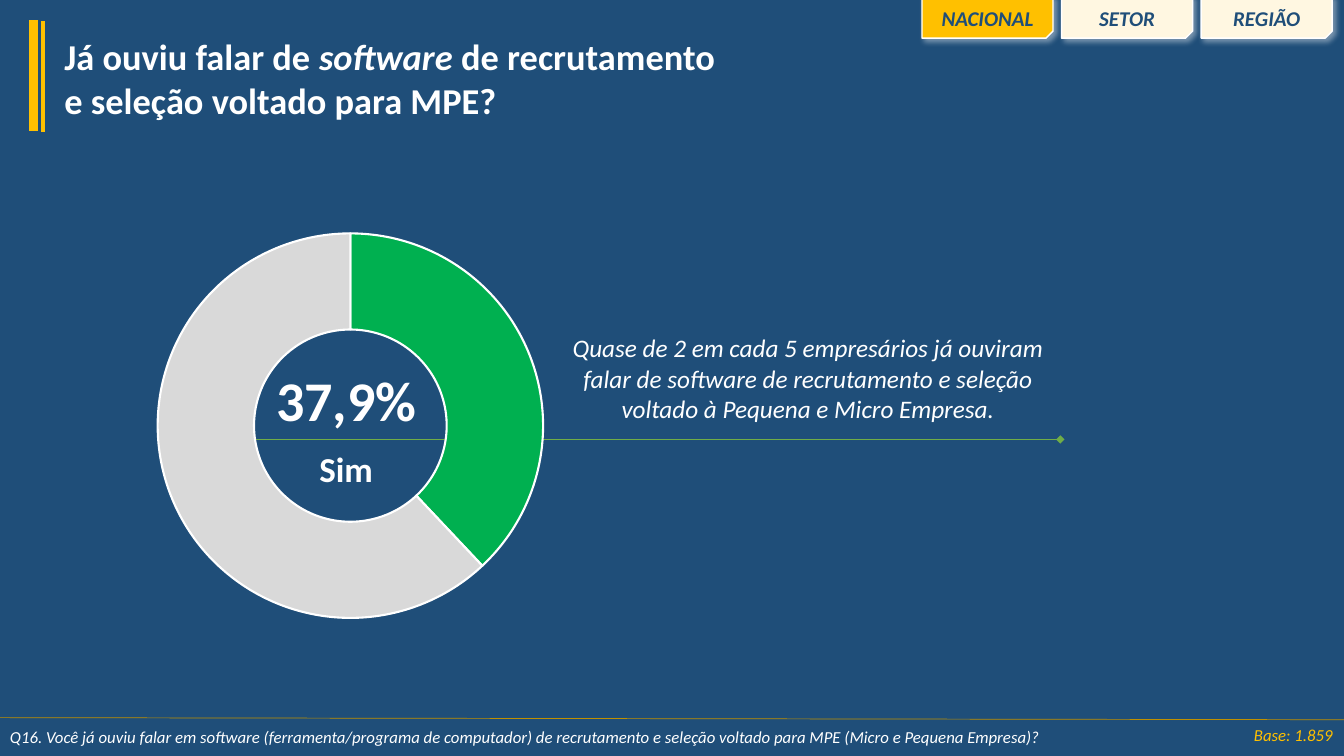
from lxml import etree
from pptx import Presentation
from pptx import util as u
from pptx.chart import data
from pptx.dml import color
from pptx.enum import chart as charts, shapes, text
from pptx.oxml import ns, parse_xml

COLORS = {"navy": "1F4E79", "gold": "FFC000", "dark_gold": "BF9000", "cream": "FFF7E1",
          "white": "FFFFFF", "green": "00B050", "gray": "D9D9D9", "leaf": "70AD47"}
TITLE = [("Já ouviu falar de ", False), ("software", True),
         (" de recrutamento e seleção voltado para MPE?", False)]
TABS = [("NACIONAL", "gold"), ("SETOR", "cream"), ("REGIÃO", "cream")]
TAB_LEFT, TAB_STEP, TAB_WIDTH = 658.6, 99.7, 93.6
ANSWERS = [("1", 38, "green"), ("2", 62, "gray")]
RING_LAYOUT = {"x": 0.198, "y": 0.027, "w": 0.617, "h": 0.973}
QUESTION = ("Q16.\u00a0Você já ouviu falar em software (ferramenta/programa de computador) de "
            "recrutamento e seleção voltado para MPE (Micro e Pequena Empresa)?")
FINDING = ("Quase de 2 em cada 5 empresários já ouviram falar de software de recrutamento "
           "e seleção voltado à Pequena e Micro Empresa.")
BASE = "Base: 1.859"
LINES = [((178.6, 313.9), (757.4, 313.9), "leaf", 0.5, True),
         ((23.8, 14.4), (23.8, 93.6), "gold", 6, False),
         ((31, 15.1), (31, 94.3), "gold", 3, False),
         ((-1.4, 512.6), (960, 514.1), "dark_gold", 0.5, False)]
TEXTS = [(QUESTION, (0, 515.5, 960, 21.6), dict(size=12, italic=True)),
         (TITLE, (38.9, 20.9, 490.3, 70.6), dict(size=26, bold=True)),
         ("37,9%", (190.1, 257.8, 115.9, 55.4), dict(size=40, bold=True, wrap=False)),
         ("Sim", (221, 316.1, 53.3, 37.4), dict(size=25, bold=True, wrap=False)),
         (FINDING, (401.8, 234, 350.6, 72.7), dict(size=18, italic=True, align="CENTER"))]


def rgb(name):
    return color.RGBColor.from_string(COLORS[name])


def points(values):
    return [u.Pt(value) for value in values]


def write(shape, content, size, fill="white", bold=False, italic=False,
          align="LEFT", anchor="TOP", wrap=True):
    frame = shape.text_frame
    frame.word_wrap = wrap
    frame.vertical_anchor = getattr(text.MSO_ANCHOR, anchor)
    paragraph = frame.paragraphs[0]
    paragraph.alignment = getattr(text.PP_ALIGN, align)
    pieces = [(content, italic)] if isinstance(content, str) else content
    for words, slanted in pieces:
        run = paragraph.add_run()
        run.text = words
        run.font.name, run.font.size = "Calibri", u.Pt(size)
        run.font.bold, run.font.italic = bold, slanted
        run.font.color.rgb = rgb(fill)


def add_line(slide, start, end, stroke, width, diamonds):
    line = slide.shapes.add_connector(shapes.MSO_CONNECTOR.STRAIGHT, *points(start + end))
    line.line.color.rgb, line.line.width = rgb(stroke), u.Pt(width)
    if diamonds:
        for tag in ("a:headEnd", "a:tailEnd"):
            etree.SubElement(line.line._get_or_add_ln(), ns.qn(tag), type="diamond")
    etree.SubElement(line._element.spPr, ns.qn("a:effectLst"))


def add_tab(slide, left, label, fill):
    tab = slide.shapes.add_shape(shapes.MSO_SHAPE.SNIP_1_RECTANGLE,
                                 *points((left, -2.9, TAB_WIDTH, 30.2)))
    tab.fill.solid()
    tab.fill.fore_color.rgb = rgb(fill)
    tab.line.color.rgb, tab.line.width = rgb("white"), u.Pt(1)
    properties = tab._element.spPr
    properties.find(ns.qn("a:xfrm")).set("flipV", "1")
    properties.append(parse_xml(
        f'<a:effectLst {ns.nsdecls("a")}><a:outerShdw blurRad="{u.Pt(4)}" dist="{u.Pt(3)}" '
        f'dir="2700000" algn="tl" rotWithShape="0"><a:srgbClr val="{COLORS["white"]}">'
        '<a:alpha val="40000"/></a:srgbClr></a:outerShdw></a:effectLst>'))
    box = slide.shapes.add_textbox(*points((left, 0.7, TAB_WIDTH, 25.2)))
    write(box, label, size=15, fill="navy", bold=True, italic=True, align="CENTER")


def add_ring(slide):
    answers = data.CategoryChartData()
    answers.categories = [name for name, _, _ in ANSWERS]
    answers.add_series("Series 1", [value for _, value, _ in ANSWERS])
    ring = slide.shapes.add_chart(charts.XL_CHART_TYPE.DOUGHNUT,
                                  *points((15.8, 159.1, 463, 283)), answers).chart
    ring.has_legend = ring.has_title = False
    ring.font.name, ring.font.size = "Calibri", u.Pt(10)
    plot = ring.plots[0]
    plot.vary_by_categories = True
    for index, (_, _, fill) in enumerate(ANSWERS):
        style = plot.series[0].points[index].format
        style.fill.solid()
        style.fill.fore_color.rgb = rgb(fill)
        style.line.color.rgb, style.line.width = rgb("white"), u.Pt(1.5)
    area = ring._chartSpace.find(".//" + ns.qn("c:plotArea"))
    area.find(".//" + ns.qn("c:holeSize")).set("val", "73")
    for layout in area.findall(ns.qn("c:layout")):
        area.remove(layout)
    settings = '<c:layoutTarget val="inner"/><c:xMode val="edge"/><c:yMode val="edge"/>'
    settings += "".join(f'<c:{key} val="{value}"/>' for key, value in RING_LAYOUT.items())
    area.insert(0, parse_xml(f'<c:layout {ns.nsdecls("c")}><c:manualLayout>{settings}'
                             '</c:manualLayout></c:layout>'))


def main():
    """Build the survey slide and save it."""
    presentation = Presentation()
    presentation.slide_width, presentation.slide_height = points((960, 540))
    slide = presentation.slides.add_slide(presentation.slide_layouts[6])
    slide.background.fill.solid()
    slide.background.fill.fore_color.rgb = rgb("navy")
    for line in LINES:
        add_line(slide, *line)
    base = slide.shapes.add_shape(shapes.MSO_SHAPE.ROUNDED_RECTANGLE,
                                  *points((876.2, 512.6, 84.2, 24.5)))
    base.shadow.inherit = False
    base.fill.background()
    base.line.fill.background()
    write(base, BASE, size=12, fill="gold", italic=True, align="RIGHT", anchor="MIDDLE")
    for index, (label, fill) in enumerate(TABS):
        add_tab(slide, TAB_LEFT + index * TAB_STEP, label, fill)
    add_ring(slide)
    for content, box, style in TEXTS:
        write(slide.shapes.add_textbox(*points(box)), content, **style)
    presentation.save("out.pptx")


if __name__ == "__main__":
    main()
